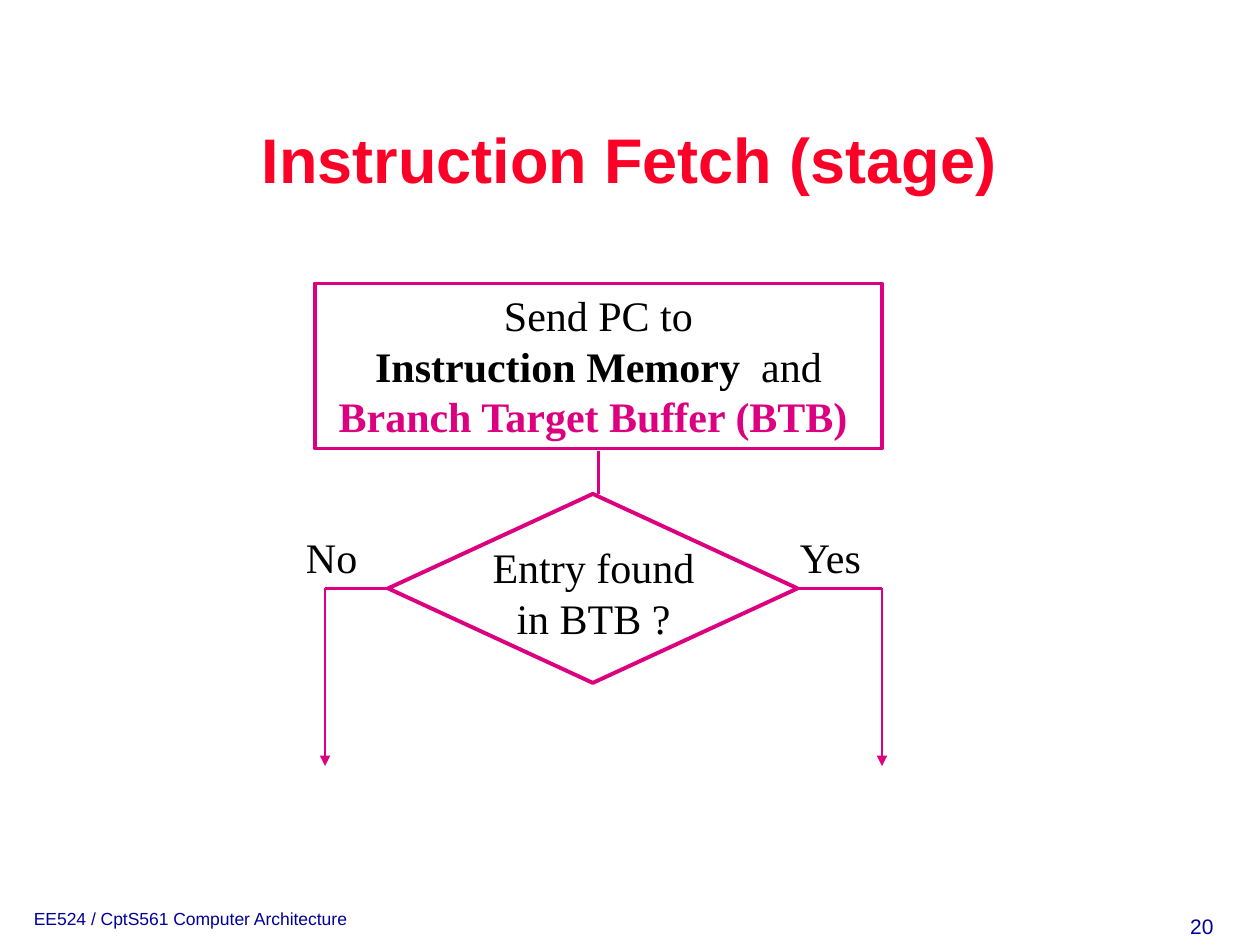
"""Build the instruction fetch flowchart slide."""
from lxml import etree
from pptx import Presentation
from pptx.dml.color import RGBColor
from pptx.enum.shapes import MSO_CONNECTOR, MSO_SHAPE
from pptx.enum.text import MSO_ANCHOR, PP_ALIGN
from pptx.oxml.ns import qn
from pptx.util import Inches, Pt

STRAIGHT = MSO_CONNECTOR.STRAIGHT
RECTANGLE, DECISION = MSO_SHAPE.RECTANGLE, MSO_SHAPE.FLOWCHART_DECISION
LEFT, CENTER, RIGHT = PP_ALIGN.LEFT, PP_ALIGN.CENTER, PP_ALIGN.RIGHT
TOP, MIDDLE = MSO_ANCHOR.TOP, MSO_ANCHOR.MIDDLE
SANS, SERIF = "Arial", "Times New Roman"
RED, MAGENTA, NAVY = "FC0128", "DC0081", "000099"
BLACK, WHITE = "000000", "FFFFFF"


def color(hex_string):
    return RGBColor.from_string(hex_string)


def add_run(paragraph, text, font=SERIF, size=24, ink=BLACK, bold=False):
    run = paragraph.add_run()
    run.text = text
    run.font.name, run.font.size, run.font.bold = font, Pt(size), bold
    run.font.color.rgb = color(ink)


class Flowchart:
    def __init__(self, slide, accent=MAGENTA):
        self.slide, self.accent = slide, accent

    def label(self, box, text, align=LEFT, anchor=TOP, wrap=True, spacing=None, **style):
        frame = self.slide.shapes.add_textbox(*map(Inches, box)).text_frame
        frame.word_wrap, frame.vertical_anchor = wrap, anchor
        paragraph = frame.paragraphs[0]
        paragraph.alignment, paragraph.line_spacing = align, spacing
        add_run(paragraph, text, **style)

    def node(self, kind, box, lines=()):
        node = self.slide.shapes.add_shape(kind, *map(Inches, box))
        node.shadow.inherit = False
        node.fill.solid()
        node.fill.fore_color.rgb = color(WHITE)
        node.line.color.rgb = color(self.accent)
        node.line.width = Pt(2.25)
        frame = node.text_frame
        frame.word_wrap, frame.vertical_anchor = True, TOP
        for index, runs in enumerate(lines):
            paragraph = frame.add_paragraph() if index else frame.paragraphs[0]
            paragraph.alignment = CENTER
            for text, style in runs:
                add_run(paragraph, text, **style)

    def line(self, start, end, width=1.5, arrow=False):
        line = self.slide.shapes.add_connector(STRAIGHT, *map(Inches, start + end))
        line.line.color.rgb = color(self.accent)
        line.line.width = Pt(width)
        if arrow:
            etree.SubElement(line.line._get_or_add_ln(), qn("a:tailEnd"), type="triangle")
        etree.SubElement(line._element.spPr, qn("a:effectLst"))


def main():
    deck = Presentation()
    deck.slide_width, deck.slide_height = Inches(10), Inches(7.5)
    chart = Flowchart(deck.slides.add_slide(deck.slide_layouts[6]))

    chart.label((9.33, 7.2, 0.4, 0.3), "20", align=RIGHT, wrap=False,
                font=SANS, size=12, ink=NAVY)
    chart.label((0.17, 7.16, 4.58, 0.27), "EE524 / CptS561 Computer Architecture",
                font=SANS, size=10, ink=NAVY)
    chart.label((1.08, 0.67, 7.83, 1.25), "Instruction Fetch (stage)", align=CENTER,
                anchor=MIDDLE, spacing=0.9, font=SANS, size=36, ink=RED, bold=True)

    no_x, yes_x, branch_y, exit_y = 2.58, 7, 4.67, 6.08
    chart.line((no_x, branch_y), (yes_x, branch_y))
    chart.node(RECTANGLE, (2.5, 2.25, 4.5, 1.31), [
        [("Send PC to", {})],
        [(" ", {}), ("Instruction Memory  ", {"bold": True}), ("and ", {})],
        [("Branch Target Buffer (BTB) ", {"ink": MAGENTA, "bold": True})],
    ])
    chart.node(DECISION, (3.08, 3.92, 3.25, 1.5))
    chart.label((3.67, 4.25, 2.08, 0.9), "Entry found in BTB ?", align=CENTER)
    chart.line((4.75, 3.58), (4.75, 3.92), width=2.25)

    for answer, label_x, exit_x in (("No", 2.33, no_x), ("Yes", 6.25, yes_x)):
        chart.line((exit_x, branch_y), (exit_x, exit_y), arrow=True)
        chart.label((label_x, 4.17, 1.67, 0.5), answer)

    deck.save("out.pptx")


if __name__ == "__main__":
    main()
